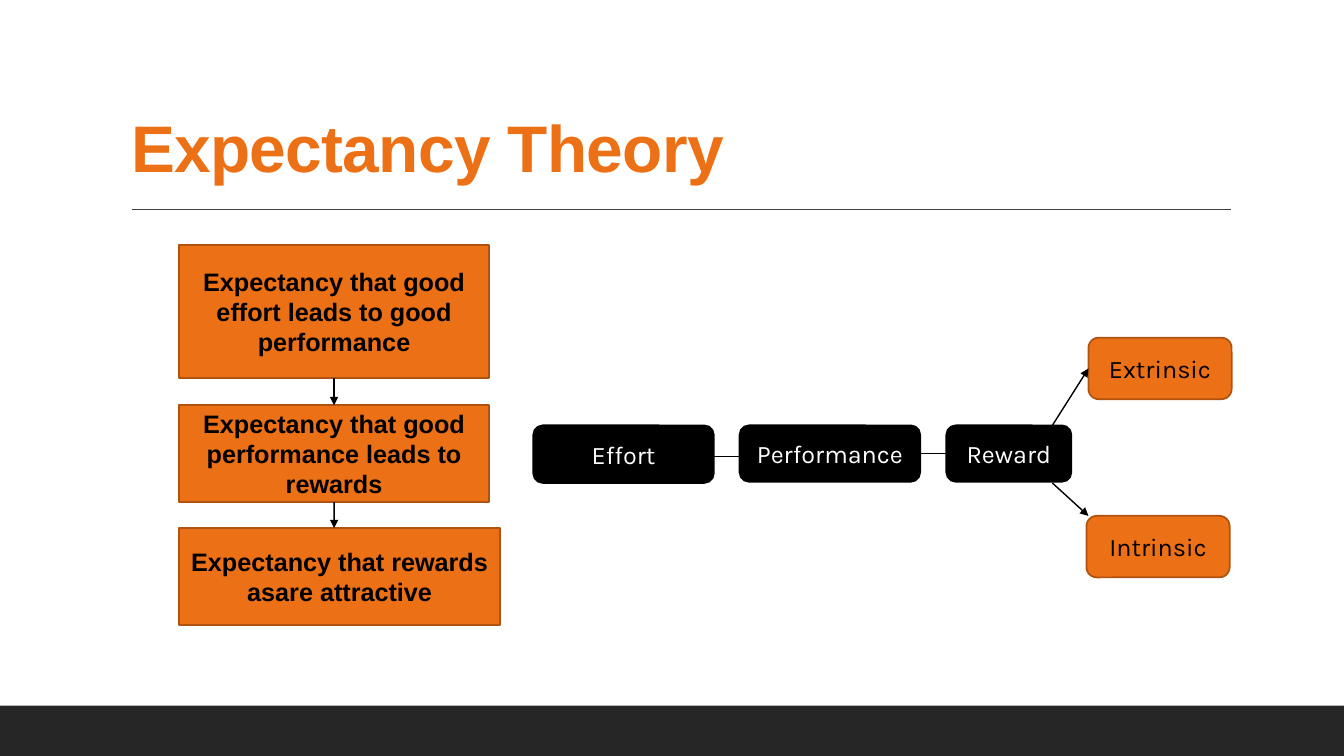
from dataclasses import dataclass

from lxml.etree import SubElement
from pptx import Presentation
from pptx.dml.color import RGBColor as RGB
from pptx.enum.shapes import MSO_CONNECTOR as Conn, MSO_SHAPE as Shape
from pptx.enum.text import MSO_ANCHOR as Anchor, PP_ALIGN as Align
from pptx.oxml.ns import qn
from pptx.shapes.autoshape import Shape as AutoShape
from pptx.slide import Slide
from pptx.util import Cm, Pt


@dataclass(frozen=True)
class Theme:
    orange: RGB = RGB(0xEC, 0x70, 0x16)
    rust: RGB = RGB(0xAF, 0x53, 0x10)
    black: RGB = RGB(0, 0, 0)
    white: RGB = RGB(255, 255, 255)
    footer: RGB = RGB(0x26, 0x26, 0x26)
    rule: RGB = RGB(0x40, 0x40, 0x40)
    heading_font: str = "Arial"
    label_font: str = "Karla"
    title_size: float = 47
    body_size: float = 18
    outline: float = 1.25
    hairline: float = 1


@dataclass(frozen=True)
class Style:
    geometry: Shape
    fill: RGB
    line: RGB
    color: RGB
    font: str
    bold: bool = False


@dataclass(frozen=True)
class Box:
    text: str
    x: float
    y: float
    w: float
    h: float
    style: Style


@dataclass(frozen=True)
class End:
    x: float = 0
    y: float = 0
    box: str = ""
    site: int = 0


@dataclass(frozen=True)
class Link:
    start: End
    end: End
    arrow: bool = False
    color: RGB = RGB(0, 0, 0)


T = Theme()
TOP, LEFT, BOTTOM, RIGHT = range(4)

STEP = Style(Shape.RECTANGLE, T.orange, T.rust, T.black, T.heading_font, True)
STAGE = Style(Shape.ROUNDED_RECTANGLE, T.black, T.black, T.white, T.label_font)
KIND = Style(Shape.ROUNDED_RECTANGLE, T.orange, T.rust, T.black, T.label_font)

EFFORT_STEP = "Expectancy that good effort leads to good performance"
REWARD_STEP = "Expectancy that good performance leads to rewards"

BOXES = [
    Box(EFFORT_STEP, 4.52, 6.17, 7.8, 3.35, STEP),
    Box(REWARD_STEP, 4.52, 10.21, 7.8, 2.44, STEP),
    Box("Expectancy that rewards asare attractive", 4.52, 13.31, 8.08, 2.44, STEP),
    Box("Effort", 13.44, 10.72, 4.55, 1.45, STAGE),
    Box("Performance", 18.64, 10.72, 4.55, 1.42, STAGE),
    Box("Reward", 23.85, 10.72, 3.15, 1.42, STAGE),
    Box("Extrinsic", 27.43, 8.51, 3.61, 1.55, KIND),
    Box("Intrinsic", 27.38, 13, 3.61, 1.55, KIND),
]

LINKS = [
    Link(End(3.33, 5.28), End(31.01, 5.28), color=T.rule),
    Link(End(box=EFFORT_STEP, site=BOTTOM), End(box=REWARD_STEP, site=TOP), True),
    Link(End(box=REWARD_STEP, site=BOTTOM), End(8.42, 13.31), True),
    Link(End(26.52, 10.72), End(box="Extrinsic", site=LEFT), True),
    Link(End(17.4, 11.51), End(18.62, 11.51)),
    Link(End(26.52, 12.17), End(27.43, 13), True),
    Link(End(box="Performance", site=RIGHT), End(box="Reward", site=LEFT)),
]


def add_title(s: Slide, text: str) -> None:
    sp = s.shapes.title
    sp.left, sp.top, sp.width, sp.height = Cm(3.05), Cm(0.79), Cm(27.94), Cm(4.04)
    tf = sp.text_frame
    tf.vertical_anchor = Anchor.BOTTOM
    p = tf.paragraphs[0]
    p.alignment = Align.LEFT
    p.line_spacing = 0.9
    r = p.add_run()
    r.text = text
    r.font.name, r.font.size, r.font.bold = T.heading_font, Pt(T.title_size), True
    r.font.color.rgb = T.orange
    r.font._element.set("spc", "-50")


def add_footer(s: Slide) -> None:
    sp = s.shapes.add_shape(Shape.RECTANGLE, 0, Cm(17.78), Cm(33.87), Cm(1.27))
    sp.shadow.inherit = False
    sp.fill.solid()
    sp.fill.fore_color.rgb = T.footer
    sp.line.fill.background()


def add_box(s: Slide, box: Box) -> AutoShape:
    style = box.style
    sp = s.shapes.add_shape(style.geometry, Cm(box.x), Cm(box.y), Cm(box.w), Cm(box.h))
    sp.shadow.inherit = False
    sp.fill.solid()
    sp.fill.fore_color.rgb = style.fill
    sp.line.color.rgb = style.line
    sp.line.width = Pt(T.outline)
    tf = sp.text_frame
    tf.word_wrap = True
    tf.vertical_anchor = Anchor.MIDDLE
    p = tf.paragraphs[0]
    p.alignment = Align.CENTER
    r = p.add_run()
    r.text = box.text
    r.font.name, r.font.size, r.font.bold = style.font, Pt(T.body_size), style.bold
    r.font.color.rgb = style.color
    return sp


def add_link(s: Slide, link: Link, shapes: dict[str, AutoShape]) -> None:
    start, end = link.start, link.end
    line = s.shapes.add_connector(
        Conn.STRAIGHT, Cm(start.x), Cm(start.y), Cm(end.x), Cm(end.y))
    if start.box:
        line.begin_connect(shapes[start.box], start.site)
    if end.box:
        line.end_connect(shapes[end.box], end.site)
    line.line.color.rgb = link.color
    line.line.width = Pt(T.hairline)
    props = line._element.spPr
    if link.arrow:
        SubElement(props.find(qn("a:ln")), qn("a:tailEnd"), type="triangle")
    SubElement(props, qn("a:effectLst"))


def main() -> None:
    prs = Presentation()
    prs.slide_width, prs.slide_height = Cm(33.87), Cm(19.05)
    s = prs.slides.add_slide(prs.slide_layouts[5])
    add_footer(s)
    add_title(s, "Expectancy Theory")
    shapes = {box.text: add_box(s, box) for box in BOXES}
    for link in LINKS:
        add_link(s, link, shapes)
    prs.save("out.pptx")


if __name__ == "__main__":
    main()
